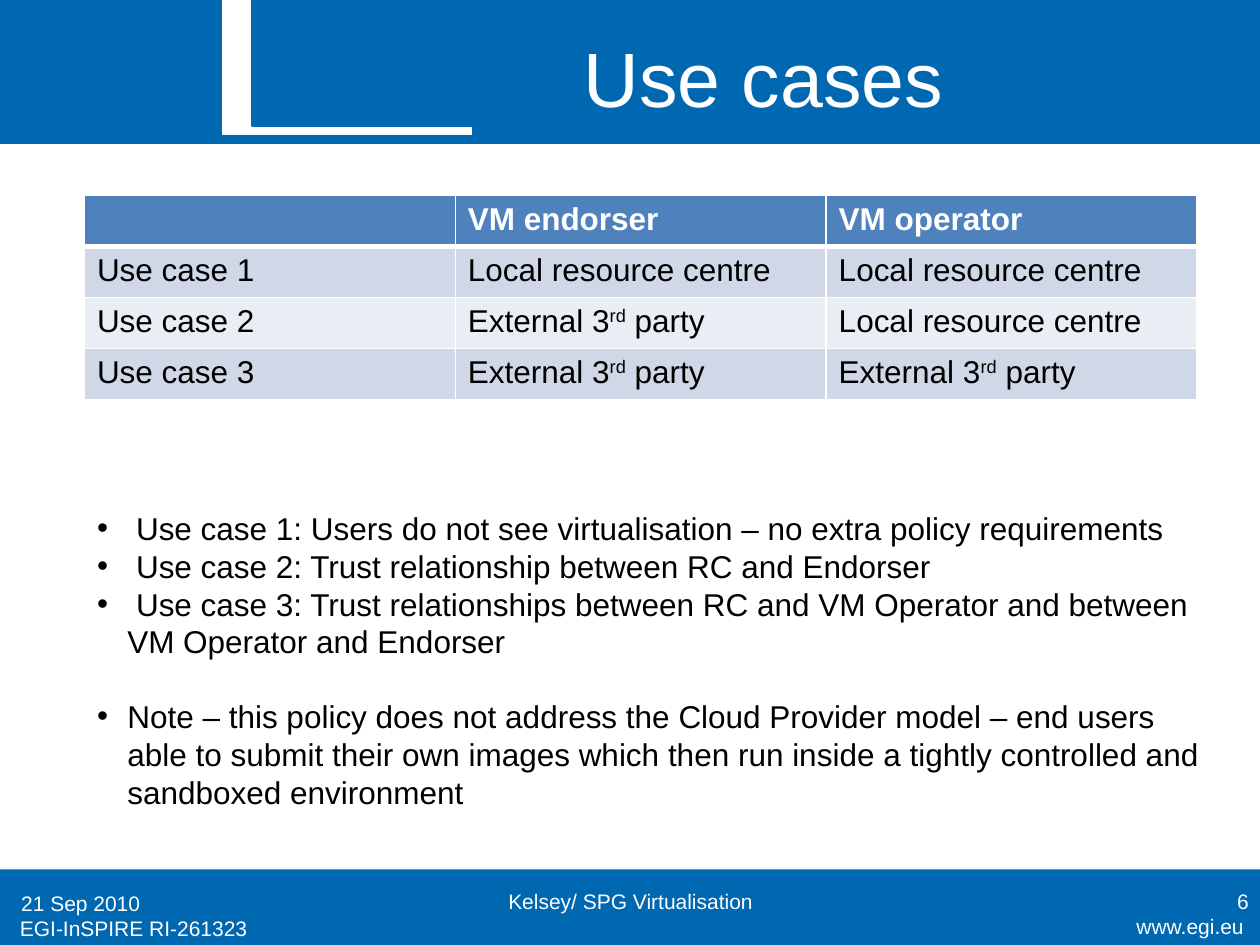
from dataclasses import dataclass

from lxml.etree import SubElement
from pptx import Presentation
from pptx.dml.color import RGBColor
from pptx.enum.shapes import MSO_SHAPE as Shape
from pptx.enum.text import MSO_ANCHOR as Anchor, PP_ALIGN as Align
from pptx.oxml.ns import qn
from pptx.util import Inches, Pt


@dataclass(frozen=True)
class Theme:
    font: str = "Arial"
    blue: str = "0067B1"
    white: str = "FFFFFF"
    black: str = "000000"
    header: str = "4F81BD"
    bands: tuple = ("D0D8E8", "E9EDF4")
    title_size: int = 44
    body_size: int = 18
    footer_size: int = 12


THEME = Theme()
ROWS = [
    ["", "VM endorser", "VM operator"],
    ["Use case 1", "Local resource centre", "Local resource centre"],
    ["Use case 2", "External 3^rd^ party", "Local resource centre"],
    ["Use case 3", "External 3^rd^ party", "External 3^rd^ party"],
]
CASES = [
    " Use case 1: Users do not see virtualisation – no extra policy requirements",
    " Use case 2: Trust relationship between RC and Endorser",
    " Use case 3: Trust relationships between RC and VM Operator and between "
    "VM Operator and Endorser",
    "Note – this policy does not address the Cloud Provider model – end users "
    "able to submit their own images which then run inside a tightly controlled "
    "and sandboxed environment",
]
FOOTERS = [
    ("www.egi.eu", (8.39, 7.2, 1.58, 0.31), Align.RIGHT, Anchor.TOP),
    ("EGI-InSPIRE RI-261323", (0.06, 7.22, 2.5, 0.31), Align.LEFT, Anchor.TOP),
    ("21 Sep 2010", (0.07, 6.97, 2.33, 0.4), Align.LEFT, Anchor.MIDDLE),
    ("Kelsey/ SPG Virtualisation", (3.42, 6.95, 3.17, 0.4), Align.CENTER, Anchor.MIDDLE),
    ("6", (7.68, 6.95, 2.33, 0.4), Align.RIGHT, Anchor.MIDDLE),
]


def add_bullet(para, indent=0.24):
    props = para._p.get_or_add_pPr()
    props.set("marL", str(Inches(indent)))
    props.set("indent", str(-Inches(indent)))
    SubElement(props, qn("a:buFont"), typeface=THEME.font)
    SubElement(props, qn("a:buChar"), char="•")


def write_text(frame, *lines, size=THEME.body_size, color=THEME.black, bold=False,
               align=Align.LEFT, anchor=Anchor.TOP, bullets=False):
    """Fill a text frame; text between ^ marks is superscript."""
    frame.word_wrap = True
    frame.vertical_anchor = anchor
    for index, line in enumerate(lines):
        para = frame.add_paragraph() if index else frame.paragraphs[0]
        para.alignment = align
        para.space_before = Pt(0)
        if bullets:
            add_bullet(para)
        para.font.size = Pt(size)
        for part, words in enumerate(line.split("^")):
            span = para.add_run()
            span.text = words
            span.font.name = THEME.font
            span.font.size = Pt(size)
            span.font.bold = bold
            span.font.color.rgb = RGBColor.from_string(color)
            if part % 2:
                span._r.get_or_add_rPr().set("baseline", "30000")


def place(shape, left, top, width, height):
    shape.left, shape.top = Inches(left), Inches(top)
    shape.width, shape.height = Inches(width), Inches(height)


def bring_to_front(slide, shape):
    slide.shapes.element.append(shape.element)


def paint(shape, color):
    shape.shadow.inherit = False
    shape.fill.solid()
    shape.fill.fore_color.rgb = RGBColor.from_string(color)
    shape.line.color.rgb = RGBColor.from_string(color)
    shape.line.width = Pt(0.75)


def add_band(slide, color, *box):
    band = slide.shapes.add_shape(Shape.RECTANGLE, *map(Inches, box))
    paint(band, color)
    return band


def curve_points(start, pull_start, pull_end, end, steps=40):
    """Points along a cubic Bézier curve."""
    for step in range(steps + 1):
        t = step / steps
        weights = ((1 - t) ** 3, 3 * t * (1 - t) ** 2, 3 * t * t * (1 - t), t ** 3)
        knots = (start, pull_start, pull_end, end)
        yield tuple(sum(w * knot[axis] for w, knot in zip(weights, knots))
                    for axis in (0, 1))


def add_swoosh(slide, left=1.77, right=3.74, bottom=1.07, bend=2.56):
    add_band(slide, THEME.white, left, 0, right - left, bottom)
    builder = slide.shapes.build_freeform(right, 0, scale=Inches(1))
    edge = curve_points((left, bottom), (bend, bottom), (left, 0), (bend, 0))
    builder.add_line_segments([(right, bottom), *edge], close=True)
    paint(builder.convert_to_shape(), THEME.blue)


def add_title(slide, text):
    title = slide.shapes.title
    place(title, 2.32, 0.13, 7.48, 0.95)
    write_text(title.text_frame, text, size=THEME.title_size, color=THEME.white,
               align=Align.CENTER, anchor=Anchor.MIDDLE)
    bring_to_front(slide, title)


def set_borders(cell, **widths):
    props = cell._tc.get_or_add_tcPr()
    for side, width in widths.items():
        line = SubElement(props, qn(f"a:ln{side}"), w=str(Pt(width)))
        fill = SubElement(line, qn("a:solidFill"))
        SubElement(fill, qn("a:srgbClr"), val=THEME.white)


def add_use_case_table(slide):
    frame = slide.shapes.add_table(len(ROWS), len(ROWS[0]), Inches(0.67), Inches(1.55),
                                   Inches(8.83), Inches(1.62))
    for row, texts in enumerate(ROWS):
        head = row == 0
        fill = THEME.header if head else THEME.bands[(row - 1) % 2]
        for column, text in enumerate(texts):
            cell = frame.table.cell(row, column)
            set_borders(cell, L=1, R=1, T=3 if row == 1 else 1, B=3 if head else 1)
            cell.fill.solid()
            cell.fill.fore_color.rgb = RGBColor.from_string(fill)
            write_text(cell.text_frame, text, bold=head,
                       color=THEME.white if head else THEME.black)


def add_case_list(slide):
    body = slide.placeholders[1]
    place(body, 0.67, 3.99, 8.98, 2.52)
    write_text(body.text_frame, *CASES, bullets=True)
    body.text_frame.paragraphs[-1].space_before = Pt(21)
    bring_to_front(slide, body)


def add_footer(slide, text, box, align, anchor):
    footer = slide.shapes.add_textbox(*map(Inches, box))
    write_text(footer.text_frame, text, size=THEME.footer_size, color=THEME.white,
               align=align, anchor=anchor)


def main():
    deck = Presentation()
    deck.slide_width, deck.slide_height = Inches(10), Inches(7.5)
    page = deck.slides.add_slide(deck.slide_layouts[1])
    add_band(page, THEME.blue, 0, 6.9, 10, 0.6).line.fill.background()
    add_band(page, THEME.blue, 0, 0, 10, 1.14)
    add_swoosh(page)
    add_title(page, "Use cases")
    add_use_case_table(page)
    for footer in FOOTERS:
        add_footer(page, *footer)
    add_case_list(page)
    deck.save("out.pptx")


if __name__ == "__main__":
    main()
